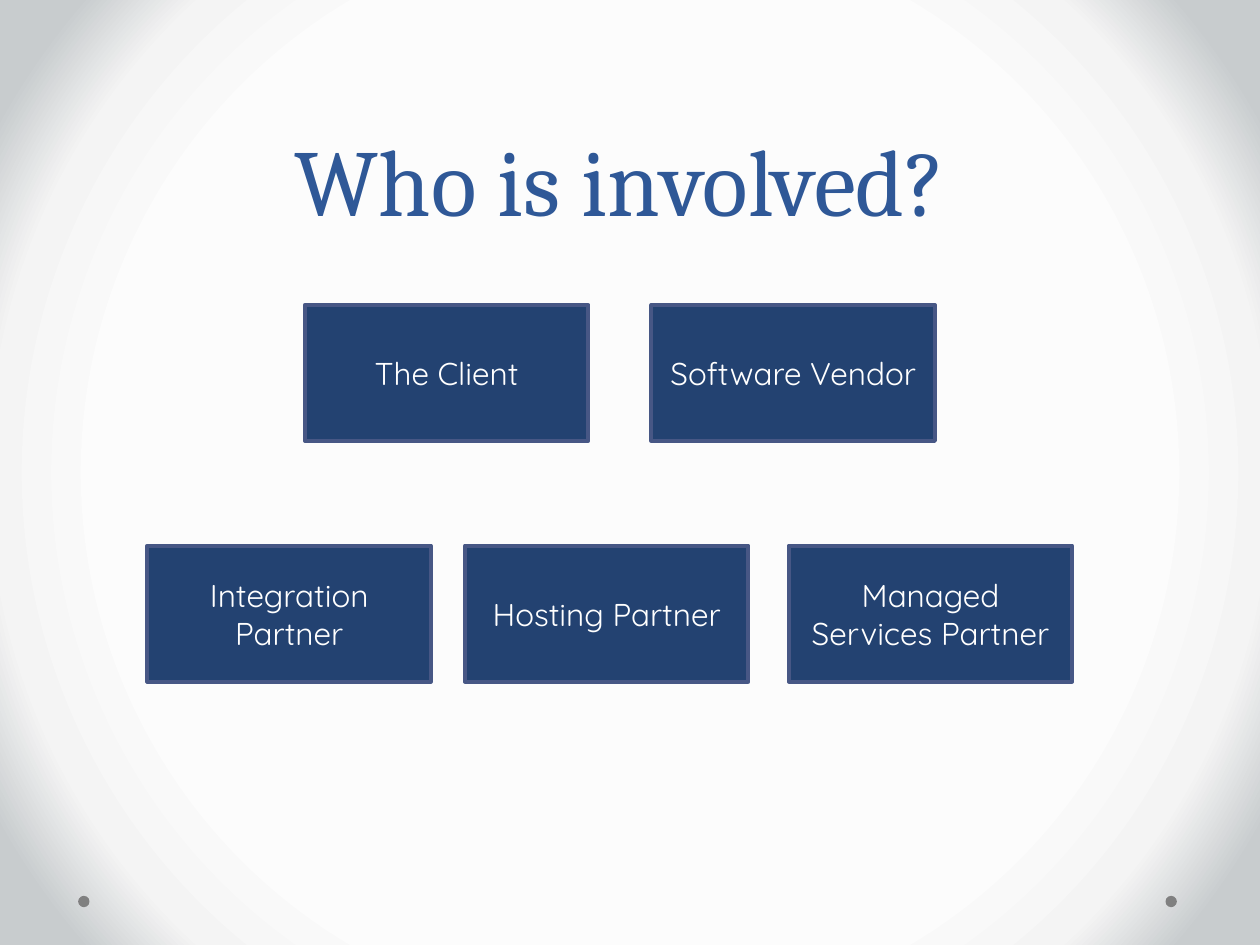
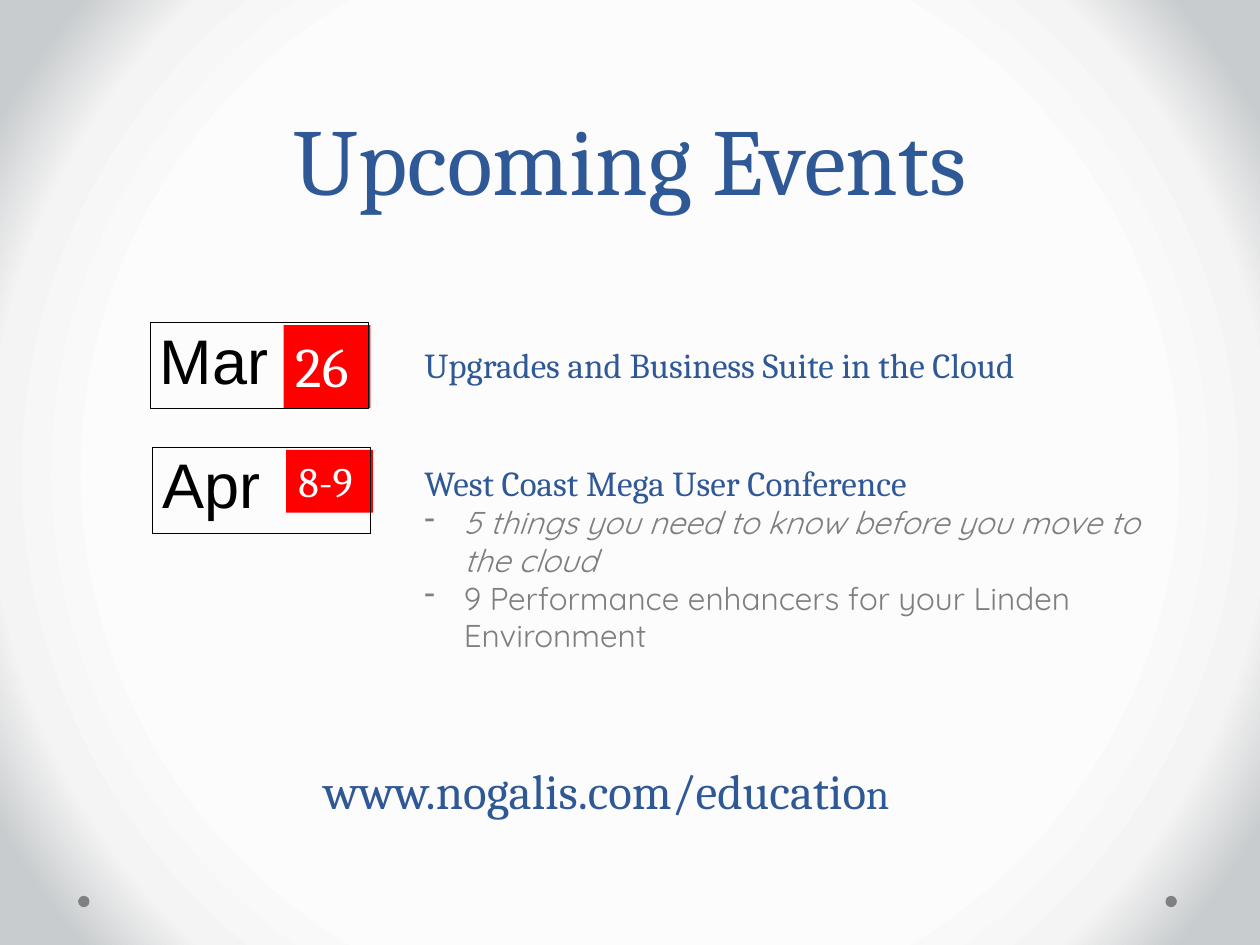
import dataclasses

import lxml.etree
import pptx
import pptx.dml.color
import pptx.enum.shapes
import pptx.enum.text
import pptx.oxml.ns
import pptx.util

Pt = pptx.util.Pt
Shape = pptx.enum.shapes.MSO_SHAPE
Align = pptx.enum.text.PP_ALIGN
Anchor = pptx.enum.text.MSO_ANCHOR

# Content; positions and sizes in points
TITLES = {
    "parties": ("Who is involved?", 30.24, 12.24),
    "events": ("Upcoming Events", 36, 0),
}
PARTY_ROWS = [
    (174.24, [(174.24, "The Client"), (372.24, "Software Vendor")]),
    (311.76, [
        (84.24, "Integration Partner"),
        (265.68, "Hosting Partner"),
        (450.72, "Managed Services Partner"),
    ]),
]
# month, day, day size, day chip height, left, top
DATES = [
    ("Mar", "26", 32, 47.52, 84.24, 180),
    ("Apr", "8-9", 24, 36, 85.68, 251.28),
]
# heading, bullets as (text, italic), top, width, height
EVENTS = [
    ("Upgrades and Business Suite in the Cloud", [], 192.96, 396, 31.68),
    ("West Coast Mega User Conference", [
        ("5 things you need to know before you move to the cloud", True),
        ("9 Performance enhancers for your Linden Environment", False),
    ], 259.92, 444.24, 118.8),
]
WEB_ADDRESS = [("www.nogalis.com/educatio", 28), ("n", 24)]


@dataclasses.dataclass(frozen=True)
class Theme:
    blue: str = "2F5897"
    navy: str = "234271"
    navy_edge: str = "475785"
    red: str = "FF0000"
    white: str = "FFFFFF"
    black: str = "000000"
    bullet_gray: str = "7F7F7F"
    dot_gray: str = "808080"
    backdrop: tuple = ((66, "FCFCFC"), (81, "F4F4F4"), (92, "C8CCCE"))
    serif: str = "Cambria"
    sans: str = "Quicksand"
    plain: str = "Arial"
    title_size: int = 54
    month_size: int = 36
    heading_size: int = 20
    body_size: int = 18


THEME = Theme()


def color(value):
    return pptx.dml.color.RGBColor.from_string(value)


def add_box(page, area, kind=Shape.RECTANGLE, fill=None, edge=None, weight=0):
    box = page.shapes.add_shape(kind, *map(Pt, area))
    box.shadow.inherit = False
    if fill:
        box.fill.solid()
        box.fill.fore_color.rgb = color(fill)
    else:
        box.fill.background()
    if edge:
        box.line.color.rgb = color(edge)
        box.line.width = Pt(weight)
    else:
        box.line.fill.background()
    return box


def add_text_box(page, area):
    return page.shapes.add_textbox(*map(Pt, area))


def set_font(font, name, size, ink):
    font.name, font.size, font.color.rgb = name, Pt(size), color(ink)


def write(box, text, name, size, ink, align=Align.LEFT, anchor=Anchor.TOP):
    frame = box.text_frame
    frame.word_wrap = True
    frame.vertical_anchor = anchor
    para = frame.paragraphs[0]
    para.text = text
    para.alignment = align
    set_font(para.font, name, size, ink)
    return para


def add_bullet(frame, text, italic):
    para = frame.add_paragraph()
    para.text = text
    properties = para._p.get_or_add_pPr()
    properties.set("marL", str(Pt(22.5)))
    properties.set("indent", str(Pt(-22.5)))
    mark = lxml.etree.SubElement(properties, pptx.oxml.ns.qn("a:buChar"))
    mark.set("char", "-")
    set_font(para.font, THEME.sans, THEME.body_size, THEME.bullet_gray)
    para.font.italic = italic


def set_backdrop(master):
    """Give every page the radial gradient."""
    master.background.fill.gradient()
    gradient = master.element.find(".//" + pptx.oxml.ns.qn("a:gradFill"))
    for child in list(gradient):
        gradient.remove(child)

    def add(parent, tag, **attributes):
        return lxml.etree.SubElement(parent, pptx.oxml.ns.qn(tag), attributes)

    stops = add(gradient, "a:gsLst")
    for percent, value in THEME.backdrop:
        add(add(stops, "a:gs", pos=str(percent * 1000)), "a:srgbClr", val=value)
    add(add(gradient, "a:path", path="circle"), "a:fillToRect",
        l="50000", t="50000", r="50000", b="50000")


def add_page(deck, key):
    """Start a page with its corner dots and title."""
    page = deck.slides.add_slide(deck.slide_layouts[6])
    for left in (666, 44.64):
        add_box(page, (left, 511.92, 6.48, 6.48), Shape.OVAL, THEME.dot_gray)
    text, left, top = TITLES[key]
    para = write(add_text_box(page, (left, top, 648, 126)), text, THEME.serif,
                 THEME.title_size, THEME.blue, Align.CENTER, Anchor.BOTTOM)
    para.line_spacing = Pt(58)
    return page


def build_parties(deck):
    page = add_page(deck, "parties")
    for top, parties in PARTY_ROWS:
        for left, party in parties:
            box = add_box(page, (left, top, 162, 77.76),
                          fill=THEME.navy, edge=THEME.navy_edge, weight=2.25)
            write(box, party, THEME.sans, THEME.body_size, THEME.white,
                  Align.CENTER, Anchor.MIDDLE)


def build_events(deck):
    page = add_page(deck, "events")

    # Calendar dates: month, red day chip, thin frame
    for month, day, day_size, chip_height, left, top in DATES:
        write(add_text_box(page, (left, top, 81.36, 51.12)), month,
              THEME.plain, THEME.month_size, THEME.black)
        chip = add_box(page, (left + 77.76, top + 5.76, 49.68, chip_height),
                       fill=THEME.red)
        write(chip, day, THEME.serif, day_size, THEME.white)
        add_box(page, (left + 1.44, top + 4.32, 124.56, 48.96),
                edge=THEME.black, weight=0.25)

    # Event descriptions
    for heading, bullets, top, width, height in EVENTS:
        box = add_text_box(page, (235.44, top, width, height))
        write(box, heading, THEME.serif, THEME.heading_size, THEME.blue)
        for text, italic in bullets:
            add_bullet(box.text_frame, text, italic)

    # Web address
    para = add_text_box(page, (177.84, 431.28, 376.56, 41.04)).text_frame.paragraphs[0]
    for text, size in WEB_ADDRESS:
        span = para.add_run()
        span.text = text
        set_font(span.font, THEME.serif, size, THEME.blue)


def main():
    deck = pptx.Presentation()
    deck.slide_width, deck.slide_height = Pt(720), Pt(540)
    set_backdrop(deck.slide_master)
    build_parties(deck)
    build_events(deck)
    deck.save("out.pptx")


if __name__ == "__main__":
    main()
